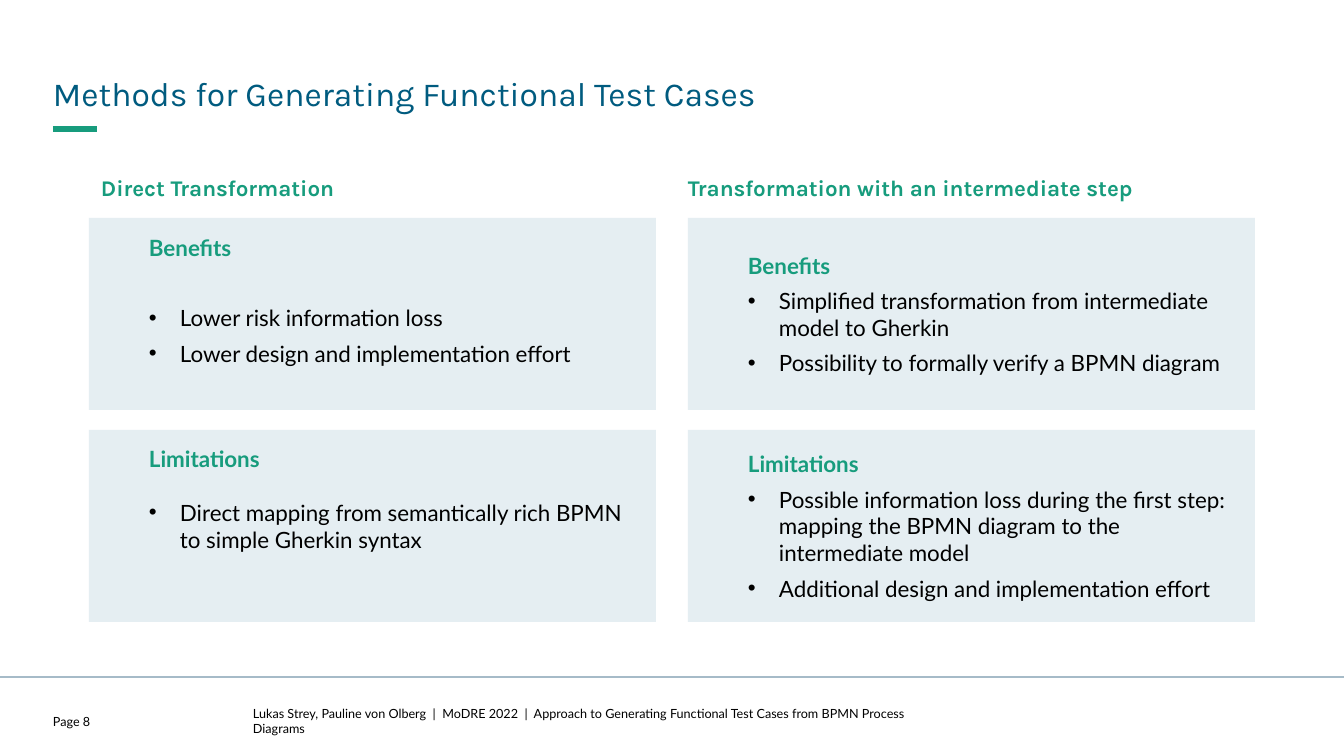
from lxml import etree
from pptx import Presentation
from pptx.dml.color import RGBColor
from pptx.enum.shapes import MSO_CONNECTOR, MSO_SHAPE
from pptx.enum.text import MSO_ANCHOR, PP_ALIGN
from pptx.oxml.ns import qn
from pptx.util import Emu, Pt

STRAIGHT = MSO_CONNECTOR.STRAIGHT
RECTANGLE = MSO_SHAPE.RECTANGLE
TOP, MIDDLE, BOTTOM = MSO_ANCHOR.TOP, MSO_ANCHOR.MIDDLE, MSO_ANCHOR.BOTTOM
LEFT = PP_ALIGN.LEFT

EMU_PER_PX = 914400 / 100.8
HEADING_FONT, BODY_FONT = "Karla", "Lato"
GREEN, BLUE, BLACK = "179C7D", "005B7F", "000000"
CARD_FILL, RULE_COLOUR = "E5EEF2", "A6BBC8"
COLUMN_LEFTS, ROW_TOPS = (89, 688), (218, 430)
CARD_WIDTH, CARD_HEIGHT = 567, 192
CARD_INDENT, CARD_MARGIN, BULLET_INDENT = 60, 8, 31

# Each card: column, row, heading, bullets, gap under heading (pt), bottom inset (px)
CARDS = (
    (0, 0, "Benefits",
     ("Lower risk information loss",
      "Lower design and implementation effort"), 31, 35),
    (1, 0, "Benefits",
     ("Simplified transformation from intermediate model to Gherkin",
      "Possibility to formally verify a BPMN diagram"), 6, CARD_MARGIN),
    (0, 1, "Limitations",
     ("Direct mapping from semantically rich BPMN to simple Gherkin syntax",),
     19, 62),
    (1, 1, "Limitations",
     ("Possible information loss during the first step: mapping the BPMN "
      "diagram to the intermediate model",
      "Additional design and implementation effort"), 6, CARD_MARGIN),
)


def px(length):
    """Turn pixels into EMU."""
    return Emu(round(length * EMU_PER_PX))


def colour(hex_code):
    """Turn a hex string into a colour."""
    return RGBColor.from_string(hex_code)


def style(paragraph, font_name, size, hex_code, bold=False):
    """Align a paragraph left and format its runs."""
    paragraph.alignment = LEFT
    for run in paragraph.runs:
        run.font.name = font_name
        run.font.size = Pt(size)
        run.font.bold = bold
        run.font.color.rgb = colour(hex_code)


def set_margins(text_frame, left, top, right, bottom):
    """Set the four insets of a text frame and let it wrap."""
    text_frame.word_wrap = True
    text_frame.margin_left, text_frame.margin_top = px(left), px(top)
    text_frame.margin_right, text_frame.margin_bottom = px(right), px(bottom)


def add_rule(slide, left, right, y, hex_code, width):
    """Draw a horizontal line without a shadow."""
    rule = slide.shapes.add_connector(STRAIGHT, px(left), px(y), px(right), px(y))
    rule.line.color.rgb = colour(hex_code)
    rule.line.width = Pt(width)
    etree.SubElement(rule._element.spPr, qn("a:effectLst"))


def add_label(slide, box, text, font_name, size, hex_code,
              anchor=MIDDLE, bold=False, line_spacing=1.0):
    """Add a text box without insets holding one paragraph."""
    text_frame = slide.shapes.add_textbox(*map(px, box)).text_frame
    set_margins(text_frame, 0, 0, 0, 0)
    text_frame.vertical_anchor = anchor
    text_frame.text = text
    paragraph = text_frame.paragraphs[0]
    paragraph.line_spacing = line_spacing
    style(paragraph, font_name, size, hex_code, bold)


def add_bullet(paragraph):
    """Give a paragraph a bullet with a hanging indent."""
    properties = paragraph._p.get_or_add_pPr()
    properties.set("marL", str(px(BULLET_INDENT)))
    properties.set("indent", str(-px(BULLET_INDENT)))
    etree.SubElement(properties, qn("a:buFont"), typeface="Arial")
    etree.SubElement(properties, qn("a:buChar"), char="•")


def add_card(slide, column, row, heading, bullets, heading_gap, bottom):
    """Add a filled card with a heading and bullets."""
    card = slide.shapes.add_shape(
        RECTANGLE, px(COLUMN_LEFTS[column]), px(ROW_TOPS[row]),
        px(CARD_WIDTH), px(CARD_HEIGHT))
    card.shadow.inherit = False
    card.fill.solid()
    card.fill.fore_color.rgb = colour(CARD_FILL)
    card.line.fill.background()
    text_frame = card.text_frame
    set_margins(text_frame, CARD_INDENT, CARD_MARGIN, CARD_MARGIN, bottom)
    text_frame.vertical_anchor = MIDDLE
    text_frame.text = heading
    style(text_frame.paragraphs[0], BODY_FONT, 16, GREEN, bold=True)
    for index, bullet in enumerate(bullets):
        paragraph = text_frame.add_paragraph()
        paragraph.text = bullet
        add_bullet(paragraph)
        paragraph.space_before = Pt(6 if index else heading_gap)
        style(paragraph, BODY_FONT, 16, BLACK)


def main():
    """Build the slide and save it."""
    presentation = Presentation()
    presentation.slide_width, presentation.slide_height = px(1344), px(756)
    slide = presentation.slides.add_slide(presentation.slide_layouts[6])
    add_rule(slide, 0, 1344, 677, RULE_COLOUR, 1.5)
    add_rule(slide, 53, 97, 129, GREEN, 4.25)
    add_label(slide, (53, 71, 1238, 42),
              "Methods for Generating Functional Test Cases",
              HEADING_FONT, 24, BLUE, BOTTOM, line_spacing=1.1)
    for left, width, text in (
            (101, 393, "Direct Transformation"),
            (688, 474, "Transformation with an intermediate step")):
        add_label(slide, (left, 171, width, 30), text,
                  HEADING_FONT, 16, GREEN, TOP, bold=True, line_spacing=1.1)
    for card in CARDS:
        add_card(slide, *card)
    add_label(slide, (53, 713, 80, 16), "Page 8", BODY_FONT, 9, BLACK)
    add_label(slide, (253, 713, 697, 16),
              "Lukas Strey, Pauline von Olberg  |  MoDRE 2022  |  Approach to "
              "Generating Functional Test Cases from BPMN Process Diagrams",
              BODY_FONT, 9, BLACK)
    presentation.save("out.pptx")


if __name__ == "__main__":
    main()
